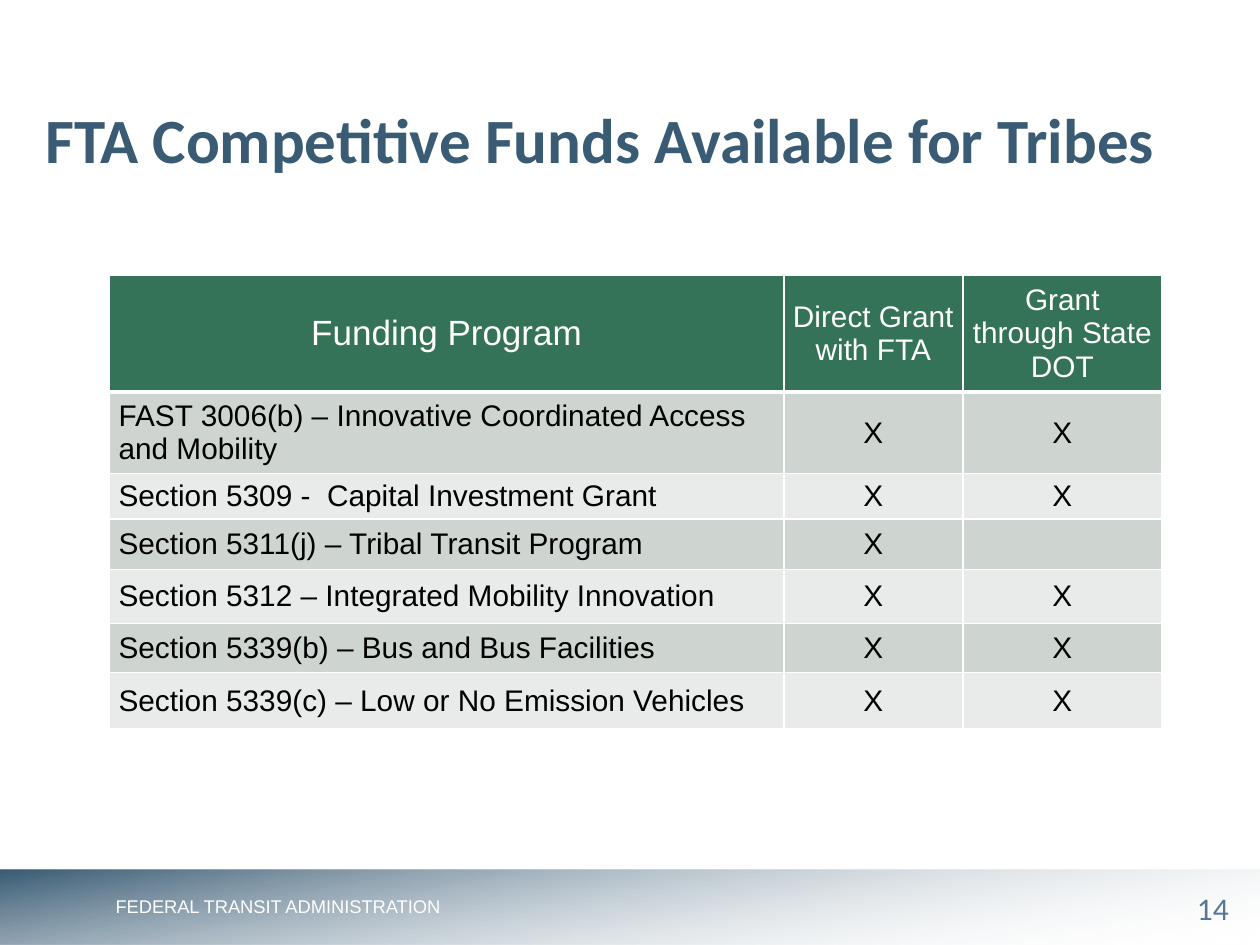
from lxml.etree import SubElement as Sub
from pptx import Presentation
from pptx.dml.color import RGBColor
from pptx.enum.shapes import MSO_SHAPE as Shape
from pptx.enum.text import MSO_ANCHOR as Anchor, PP_ALIGN as Align
from pptx.oxml.ns import qn
from pptx.util import Cm, Pt

NAVY, WHITE, BLACK, GREEN = "395B74", "FFFFFF", "000000", "347358"
BANDS = ["CED5D1", "E8EBEA"]
COLS = [13.59, 3.61, 4.01]
HEADS = ["Funding Program", "Direct Grant with FTA", "Grant through State DOT"]
ROWS = [
    ("FAST 3006(b) – Innovative Coordinated Access and Mobility", "X", "X"),
    ("Section 5309 -  Capital Investment Grant", "X", "X"),
    ("Section 5311(j) – Tribal Transit Program", "X", ""),
    ("Section 5312 – Integrated Mobility Innovation", "X", "X"),
    ("Section 5339(b) – Bus and Bus Facilities", "X", "X"),
    ("Section 5339(c) – Low or No Emission Vehicles", "X", "X"),
]
TALL = [1.57, 0.97, 0.91, 0.99, 1.09, 0.99, 1.14]


def color(code):
    return RGBColor.from_string(code)


def write(frame, text, size, code, font="Arial", align=Align.LEFT, bold=False):
    frame.text = text
    para = frame.paragraphs[0]
    para.alignment = align
    for run in para.runs:
        run.font.name = font
        run.font.size = Pt(size)
        run.font.bold = bold
        run.font.color.rgb = color(code)


def add_bar(slide):
    bar = slide.shapes.add_shape(Shape.RECTANGLE, 0, Cm(17.53), Cm(25.4), Cm(1.52))
    bar.shadow.inherit = False
    bar.line.fill.background()
    bar.fill.gradient()
    bar.fill.gradient_angle = 280
    stops = bar.fill.gradient_stops
    for stop, code, place in zip(stops, (NAVY, WHITE), (0, 0.99)):
        stop.color.rgb = color(code)
        stop.position = place
    clear = bar.fill._xPr.findall(".//" + qn("a:srgbClr"))[-1]
    Sub(clear, qn("a:alpha"), val="0")


def add_label(slide, box, text, size, code, font, align, wrap):
    frame = slide.shapes.add_textbox(*map(Cm, box)).text_frame
    frame.word_wrap = wrap
    write(frame, text, size, code, font, align)


def add_title(slide, text):
    title = slide.shapes.title
    title.left, title.top, title.width, title.height = map(Cm, (0.66, 1.52, 23.22, 2.54))
    title.text_frame.vertical_anchor = Anchor.MIDDLE
    write(title.text_frame, text, 36, NAVY, "Calibri", bold=True)


def edge(cell, side, width):
    line = Sub(cell._tc.get_or_add_tcPr(), qn("a:ln" + side), w=str(Pt(width)))
    Sub(Sub(line, qn("a:solidFill")), qn("a:srgbClr"), val=WHITE)


def fill_cell(cell, text, size, code, back, align, base):
    for side, width in zip("LRTB", (1, 1, 1, base)):
        edge(cell, side, width)
    cell.fill.solid()
    cell.fill.fore_color.rgb = color(back)
    if text:
        cell.vertical_anchor = Anchor.MIDDLE
        cell.margin_left = cell.margin_right = Cm(0.18)
        cell.margin_top = cell.margin_bottom = Cm(0.1)
        write(cell.text_frame, text, size, code, align=align)


def add_grid(slide):
    area = map(Cm, (2.21, 5.54, sum(COLS), sum(TALL)))
    grid = slide.shapes.add_table(len(TALL), len(COLS), *area).table
    for col, width in zip(grid.columns, COLS):
        col.width = Cm(width)
    for row, height in zip(grid.rows, TALL):
        row.height = Cm(height)
    for c, text in enumerate(HEADS):
        size = 17 if c else 20
        fill_cell(grid.cell(0, c), text, size, WHITE, GREEN, Align.CENTER, 3)
    for r, row in enumerate(ROWS):
        for c, text in enumerate(row):
            align = Align.CENTER if c else Align.LEFT
            fill_cell(grid.cell(r + 1, c), text, 17, BLACK, BANDS[r % 2], align, 1)


def main():
    deck = Presentation()
    deck.slide_width, deck.slide_height = Cm(25.4), Cm(19.05)
    slide = deck.slides.add_slide(deck.slide_layouts[5])
    add_bar(slide)
    add_label(slide, (23.5, 17.8, 1.9, 0.97), "14", 18, "577795",
              "Calibri", Align.CENTER, True)
    add_label(slide, (2.08, 17.93, 7.24, 0.71), "FEDERAL TRANSIT ADMINISTRATION",
              10.5, WHITE, "Arial", Align.LEFT, False)
    add_title(slide, "FTA Competitive Funds Available for Tribes")
    add_grid(slide)
    deck.save("out.pptx")


if __name__ == "__main__":
    main()
